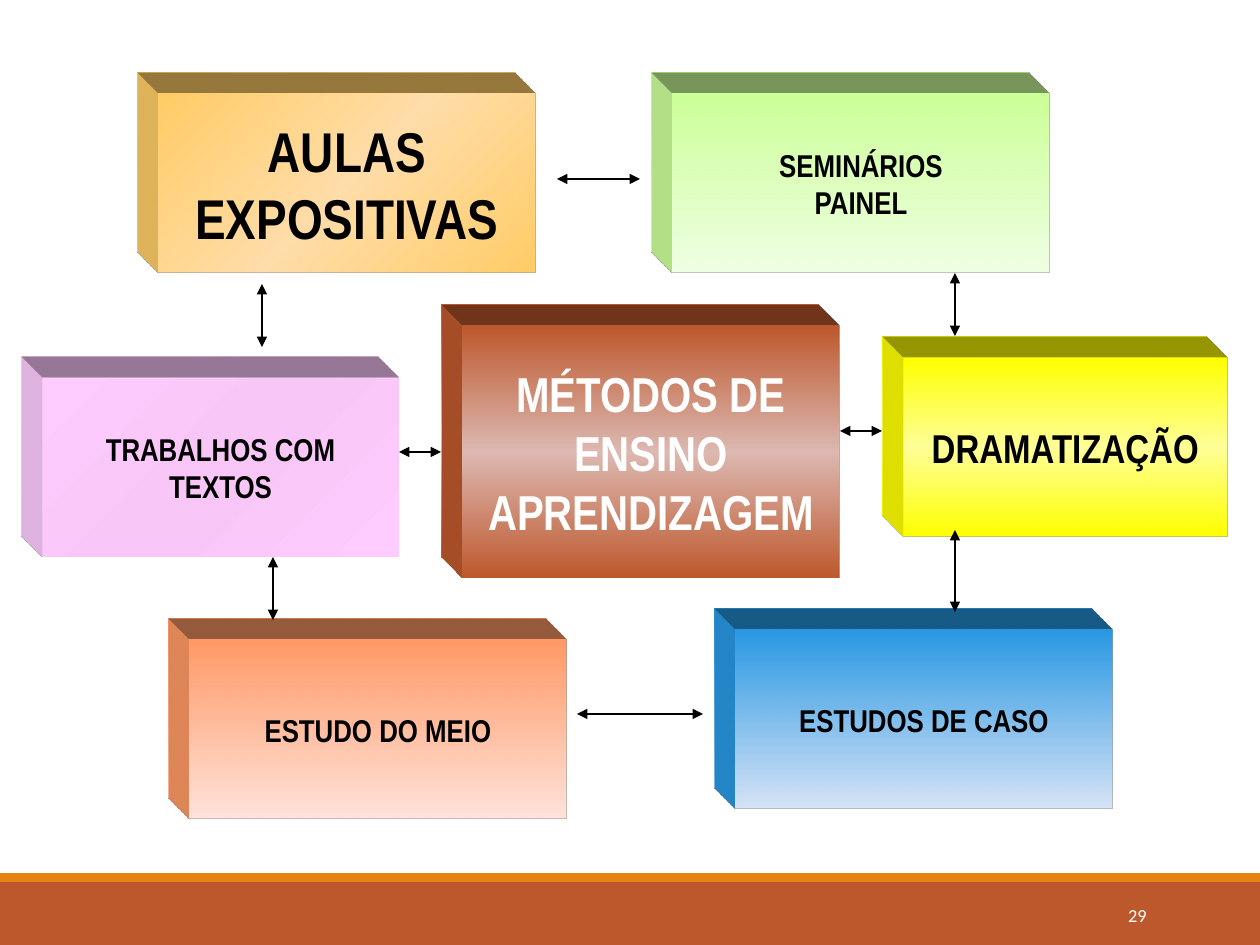
from lxml import etree
from pptx import Presentation
from pptx.dml.color import RGBColor
from pptx.enum.shapes import MSO_CONNECTOR, MSO_SHAPE
from pptx.enum.text import MSO_ANCHOR, PP_ALIGN
from pptx.oxml import parse_xml
from pptx.oxml.ns import qn
from pptx.util import Emu, Pt

RECTANGLE = MSO_SHAPE.RECTANGLE
STRAIGHT = MSO_CONNECTOR.STRAIGHT
MIDDLE = MSO_ANCHOR.MIDDLE
CENTER, RIGHT = PP_ALIGN.CENTER, PP_ALIGN.RIGHT

WHITE = RGBColor(0xFF, 0xFF, 0xFF)
BLACK = RGBColor(0x00, 0x00, 0x00)
RUST = RGBColor(0xBD, 0x58, 0x2C)
PALE_RUST = RGBColor(0xDC, 0xB8, 0xB1)
ORANGE = RGBColor(0xE4, 0x83, 0x12)
AMBER = RGBColor(0xFF, 0xCC, 0x66)
PALE_AMBER = RGBColor(0xFF, 0xDD, 0xA9)
SALMON = RGBColor(0xFF, 0x99, 0x66)
PALE_SALMON = RGBColor(0xFF, 0xE3, 0xDB)
LIME = RGBColor(0xCC, 0xFF, 0x99)
PALE_LIME = RGBColor(0xEF, 0xFF, 0xE3)
BLUE = RGBColor(0x29, 0x98, 0xE3)
PALE_BLUE = RGBColor(0xD6, 0xE3, 0xF6)
PINK = RGBColor(0xFF, 0xCC, 0xFF)
DULL_PINK = RGBColor(0xF8, 0xC7, 0xF8)
YELLOW = RGBColor(0xFF, 0xFF, 0x00)
PALE_YELLOW = RGBColor(0xFF, 0xFF, 0x98)

PX = 914400 / 126
DEPTH = 430200  # extrusion of every block, in EMU
A_NS = 'xmlns:a="http://schemas.openxmlformats.org/drawingml/2006/main"'


def px(*lengths):
    return [Emu(round(length * PX)) for length in lengths]


def write_text(frame, text, size, font="Arial Narrow", color=BLACK, bold=True, align=CENTER):
    frame.word_wrap = True
    frame.vertical_anchor = MIDDLE
    for number, line in enumerate(text.split("\n")):
        paragraph = frame.paragraphs[0] if number == 0 else frame.add_paragraph()
        paragraph.alignment = align
        run = paragraph.add_run()
        run.text = line
        run.font.name = font
        run.font.size = Pt(size)
        run.font.bold = bold
        run.font.color.rgb = color


prs = Presentation()
prs.slide_width, prs.slide_height = px(1260, 945)
slide = prs.slides.add_slide(prs.slide_layouts[6])
shapes = slide.shapes

# Footer bands and page number
for top, height, color in [(882, 63, RUST), (873, 9, ORANGE)]:
    band = shapes.add_shape(RECTANGLE, *px(0, top, 1260, height))
    band.shadow.inherit = False
    band.fill.solid()
    band.fill.fore_color.rgb = color
    band.line.fill.background()
page_number = shapes.add_textbox(*px(1023, 890, 136, 50))
write_text(page_number.text_frame, "29", 10.5, font="Calibri", color=WHITE, bold=False, align=RIGHT)

# Extruded blocks: text, box, gradient colours, gradient angle, text size, text colour
methods = [
    ("MÉTODOS DE ENSINO APRENDIZAGEM", (462, 326, 378, 252), (RUST, PALE_RUST, RUST), 90, 28, WHITE),
    ("AULAS EXPOSITIVAS", (158, 94, 378, 179), (AMBER, PALE_AMBER, AMBER), 45, 32, BLACK),
    ("ESTUDO DO MEIO", (189, 640, 378, 179), (SALMON, PALE_SALMON), 90, 18, BLACK),
    ("SEMINÁRIOS\nPAINEL", (672, 94, 378, 179), (LIME, PALE_LIME), 90, 18, BLACK),
    ("ESTUDOS DE CASO", (735, 630, 378, 179), (BLUE, PALE_BLUE), 90, 18, BLACK),
    ("TRABALHOS COM TEXTOS", (42, 378, 357, 179), (PINK, DULL_PINK, PINK), 45, 18, BLACK),
    ("DRAMATIZAÇÃO", (903, 358, 325, 179), (YELLOW, PALE_YELLOW, YELLOW), 90, 23, BLACK),
]
for text, box, colors, angle, size, text_color in methods:
    block = shapes.add_shape(RECTANGLE, *px(*box))
    block.shadow.inherit = False
    block.line.fill.background()
    block.fill.gradient()
    block.fill.gradient_angle = 360 - angle
    properties = block._element.spPr
    stops = properties.find(".//" + qn("a:gsLst"))
    for stop in list(stops):
        stops.remove(stop)
    for number, color in enumerate(colors):
        position = 100000 * number // (len(colors) - 1)
        stop = etree.SubElement(stops, qn("a:gs"), pos=str(position))
        etree.SubElement(stop, qn("a:srgbClr"), val=str(color))
    properties.append(parse_xml(
        f'<a:scene3d {A_NS}><a:camera prst="legacyObliqueTopLeft"/>'
        '<a:lightRig rig="legacyFlat3" dir="b"/></a:scene3d>'))
    properties.append(parse_xml(
        f'<a:sp3d {A_NS} extrusionH="{DEPTH}" prstMaterial="legacyMatte">'
        '<a:bevelT w="13500" h="13500" prst="angle"/><a:bevelB w="13500" h="13500" prst="angle"/>'
        f'<a:extrusionClr><a:srgbClr val="{colors[0]}"/></a:extrusionClr></a:sp3d>'))
    write_text(block.text_frame, text, size, color=text_color)

# Two-headed arrows between the blocks
arrows = [
    (262, 284, 262, 347),
    (273, 557, 273, 620),
    (955, 273, 955, 336),
    (955, 530, 955, 612),
    (577, 714, 703, 714),
    (557, 179, 640, 179),
    (399, 452, 441, 452),
    (840, 431, 882, 431),
]
for ends in arrows:
    arrow = shapes.add_connector(STRAIGHT, *px(*ends))
    arrow.line.color.rgb = BLACK
    arrow.line.width = Pt(0.75)
    for end in ("a:headEnd", "a:tailEnd"):
        etree.SubElement(arrow.line._get_or_add_ln(), qn(end), type="triangle")
    etree.SubElement(arrow._element.spPr, qn("a:effectLst"))

prs.save("out.pptx")
